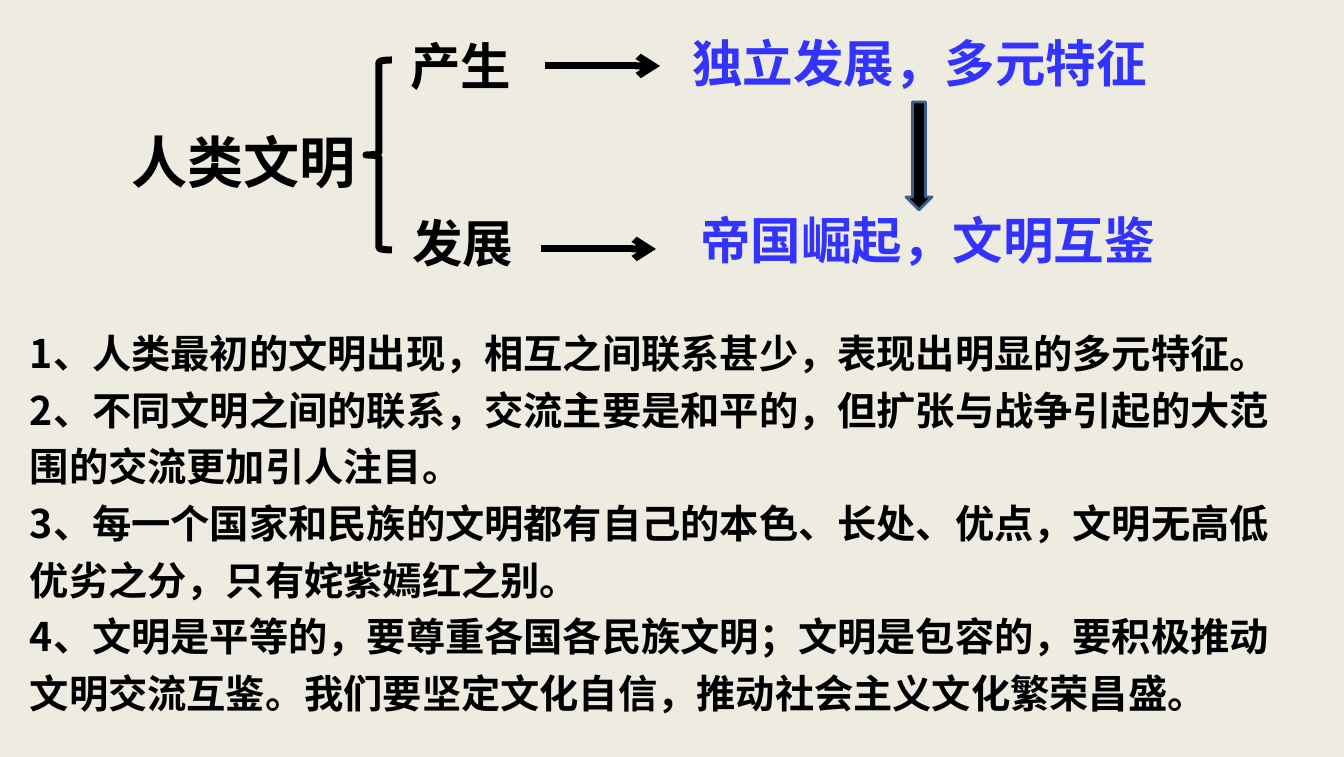
from pptx import Presentation
from pptx import util as u
from pptx.dml.color import RGBColor
from pptx.enum import shapes, text
from pptx.oxml.ns import qn
from lxml import etree

FONT = "Noto Sans CJK SC"
PAPER = RGBColor(0xEE, 0xEC, 0xE1)
BLACK = RGBColor(0, 0, 0)
BLUE = RGBColor(0x33, 0x33, 0xFF)
EDGE = RGBColor(0x3A, 0x5F, 0x8C)

SIZE = 1344, 757
LABELS = [
    ("人类文明", (116, 122, 255, 78), 40, BLACK),
    ("产生", (393, 30, 136, 72), 36, BLACK),
    ("发展", (396, 207, 133, 72), 36, BLACK),
    ("帝国崛起，文明互鉴", (665, 204, 525, 72), 36, BLUE),
    ("独立发展，多元特征", (665, 27, 509, 72), 36, BLUE),
]
POINTS = [
    "1、人类最初的文明出现，相互之间联系甚少，表现出明显的多元特征。",
    "2、不同文明之间的联系，交流主要是和平的，但扩张与战争引起的大范围的交流更加引人注目。",
    "3、每一个国家和民族的文明都有自己的本色、长处、优点，文明无高低优劣之分，只有姹紫嫣红之别。",
    "4、文明是平等的，要尊重各国各民族文明；文明是包容的，要积极推动文明交流互鉴。"
    "我们要坚定文化自信，推动社会主义文化繁荣昌盛。",
]
NOTES = 20, 315, 1297, 405
BRACE = 366, 60, 26, 190
DOWN = 906, 102, 26, 108
ARROWS = [(545, 66), (541, 249)]
REACH = 115


def px(*nums):
    return [round(n * 914400 / 101) for n in nums]


def write(lines, box, size, color, align, gap=None):
    frame = slide.shapes.add_textbox(*px(*box)).text_frame
    frame.word_wrap = True
    frame.auto_size = text.MSO_AUTO_SIZE.SHAPE_TO_FIT_TEXT
    frame.text = "\n".join(lines)
    for para in frame.paragraphs:
        para.alignment = align
        para.line_spacing = gap
        for run in para.runs:
            font = run.font
            font.size, font.bold, font.name = u.Pt(size), True, FONT
            font.color.rgb = color
            east = etree.SubElement(run._r.get_or_add_rPr(), qn("a:ea"))
            east.set("typeface", FONT)


def draw(kind, box, color, width):
    shape = slide.shapes.add_shape(kind, *px(*box))
    shape.shadow.inherit = False
    shape.line.color.rgb, shape.line.width = color, u.Pt(width)
    return shape


def arrow(x, y):
    line = slide.shapes.add_connector(
        shapes.MSO_CONNECTOR.STRAIGHT, *px(x, y, x + REACH, y))
    line.line.color.rgb, line.line.width = BLACK, u.Pt(5)
    props = line._element.spPr
    etree.SubElement(props.find(qn("a:ln")), qn("a:tailEnd"), type="arrow")
    etree.SubElement(props, qn("a:effectLst"))


deck = Presentation()
deck.slide_width, deck.slide_height = px(*SIZE)
slide = deck.slides.add_slide(deck.slide_layouts[6])
slide.background.fill.solid()
slide.background.fill.fore_color.rgb = PAPER

for label, box, size, color in LABELS:
    write([label], box, size, color, text.PP_ALIGN.CENTER)
draw(shapes.MSO_SHAPE.LEFT_BRACE, BRACE, BLACK, 5).fill.background()
write(POINTS, NOTES, 28, BLACK, text.PP_ALIGN.LEFT, 1.2)
for start in ARROWS:
    arrow(*start)
down = draw(shapes.MSO_SHAPE.DOWN_ARROW, DOWN, EDGE, 2)
down.fill.solid()
down.fill.fore_color.rgb = BLACK

deck.save("out.pptx")
